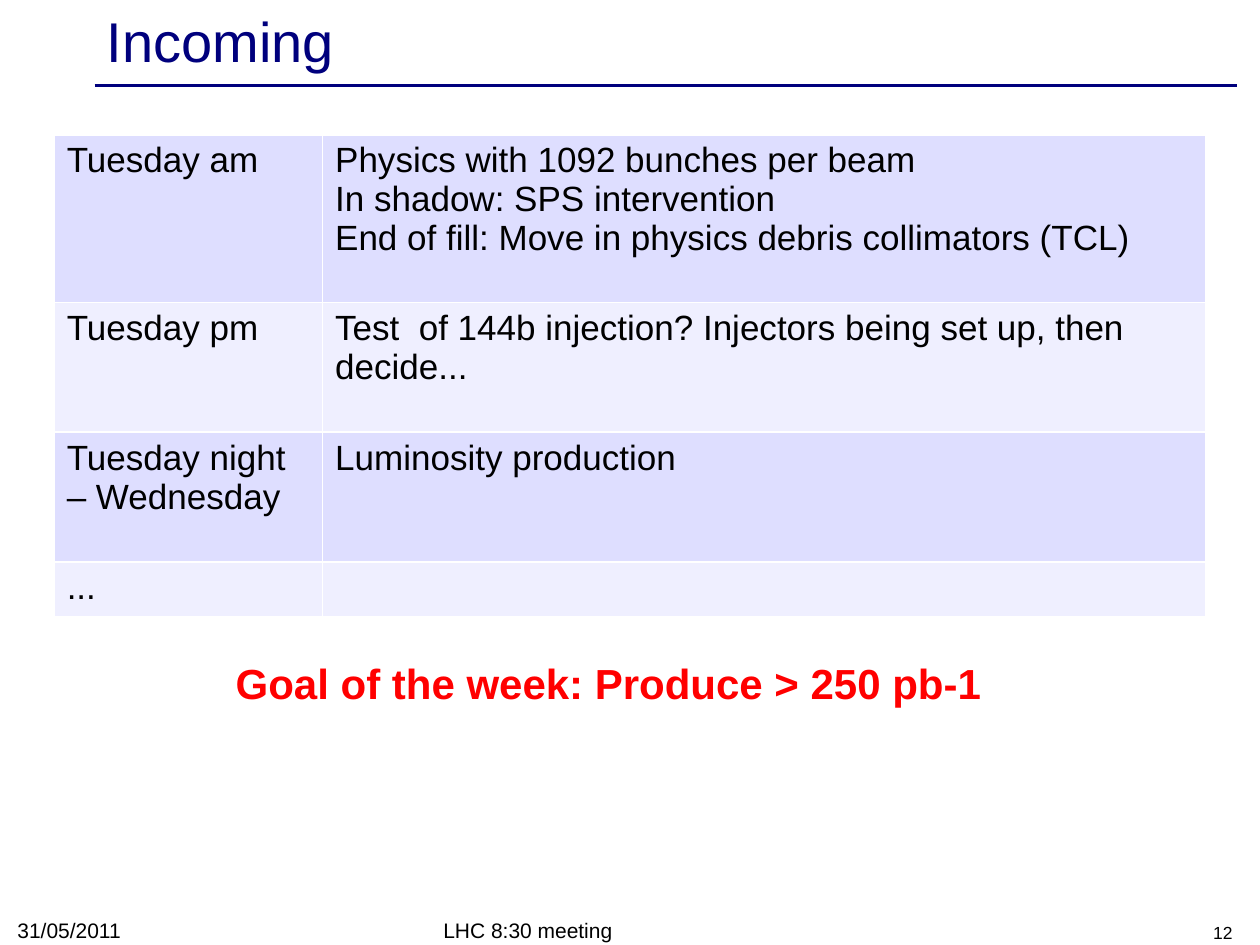
"""Build the "Incoming" schedule slide of the LHC 8:30 meeting."""
from lxml import etree
from pptx import Presentation
from pptx.dml.color import RGBColor
from pptx.enum.shapes import MSO_CONNECTOR
from pptx.enum.text import MSO_ANCHOR, PP_ALIGN
from pptx.oxml import parse_xml
from pptx.oxml.ns import nsdecls, qn
from pptx.util import Inches, Pt

STRAIGHT = MSO_CONNECTOR.STRAIGHT
MIDDLE, BOTTOM = MSO_ANCHOR.MIDDLE, MSO_ANCHOR.BOTTOM
LEFT, CENTER, RIGHT = PP_ALIGN.LEFT, PP_ALIGN.CENTER, PP_ALIGN.RIGHT
NAVY, BLACK, RED, WHITE = "00007D", "000000", "FF0000", "FFFFFF"
BANDS = ["DEDEFF", "EFEFFF"]


def rgb(value):
    return RGBColor.from_string(value)


def write(frame, text, size, color, align=LEFT, bold=False):
    frame.text = text
    frame.word_wrap = True
    for paragraph in frame.paragraphs:
        paragraph.alignment = align
        for run in paragraph.runs:
            run.font.name = "Arial"
            run.font.size = Pt(size)
            run.font.bold = bold
            run.font.color.rgb = rgb(color)


prs = Presentation()
prs.slide_width, prs.slide_height = Inches(10), Inches(7.5)
slide = prs.slides.add_slide(prs.slide_layouts[6])

title_rule = slide.shapes.add_connector(
    STRAIGHT, Inches(0.75), Inches(0.68), Inches(9.82), Inches(0.68))
title_rule.line.color.rgb = rgb(NAVY)
title_rule.line.width = Pt(2)
etree.SubElement(title_rule._element.spPr, qn("a:effectLst"))

captions = [
    ("Incoming", 0.75, 0.03, 9, 0.57, 32, NAVY, LEFT, MIDDLE, False),
    ("LHC 8:30 meeting", 3.42, 7.25, 3.17, 0.28, 12, BLACK, LEFT, BOTTOM, False),
    ("12", 7.55, 7.25, 2.33, 0.28, 10, BLACK, RIGHT, BOTTOM, False),
    ("31/05/2011", 0.04, 7.24, 2.33, 0.29, 12, BLACK, LEFT, BOTTOM, False),
    ("Goal of the week: Produce > 250 pb-1", 1.68, 5.17, 6.3, 0.5, 24, RED,
     CENTER, MIDDLE, True),
]
for text, left, top, width, height, size, color, align, anchor, bold in captions:
    caption = slide.shapes.add_textbox(
        Inches(left), Inches(top), Inches(width), Inches(height))
    caption.text_frame.vertical_anchor = anchor
    write(caption.text_frame, text, size, color, align, bold)

plan = [
    ("Tuesday am", "Physics with 1092 bunches per beam\n"
     "In shadow: SPS intervention\n"
     "End of fill: Move in physics debris collimators (TCL)", 1.33),
    ("Tuesday pm",
     "Test  of 144b injection? Injectors being set up, then decide...", 1.03),
    ("Tuesday night – Wednesday", "Luminosity production", 1.03),
    ("...", "", 0.41),
]
schedule = slide.shapes.add_table(
    len(plan), 2, Inches(0.43), Inches(1.07), Inches(9.14), Inches(3.8)).table
schedule.first_row = False
for column, width in zip(schedule.columns, (2.13, 7.01)):
    column.width = Inches(width)
for index, (period, activity, height) in enumerate(plan):
    schedule.rows[index].height = Inches(height)
    for cell, text in zip(schedule.rows[index].cells, (period, activity)):
        write(cell.text_frame, text, 20, BLACK)
        cell.fill.solid()
        cell.fill.fore_color.rgb = rgb(BANDS[index % 2])
        properties = cell._tc.get_or_add_tcPr()
        for position, side in enumerate(("lnL", "lnR", "lnT", "lnB")):
            properties.insert(position, parse_xml(
                f'<a:{side} {nsdecls("a")} w="{Pt(1)}"><a:solidFill>'
                f'<a:srgbClr val="{WHITE}"/></a:solidFill></a:{side}>'))

prs.save("out.pptx")
